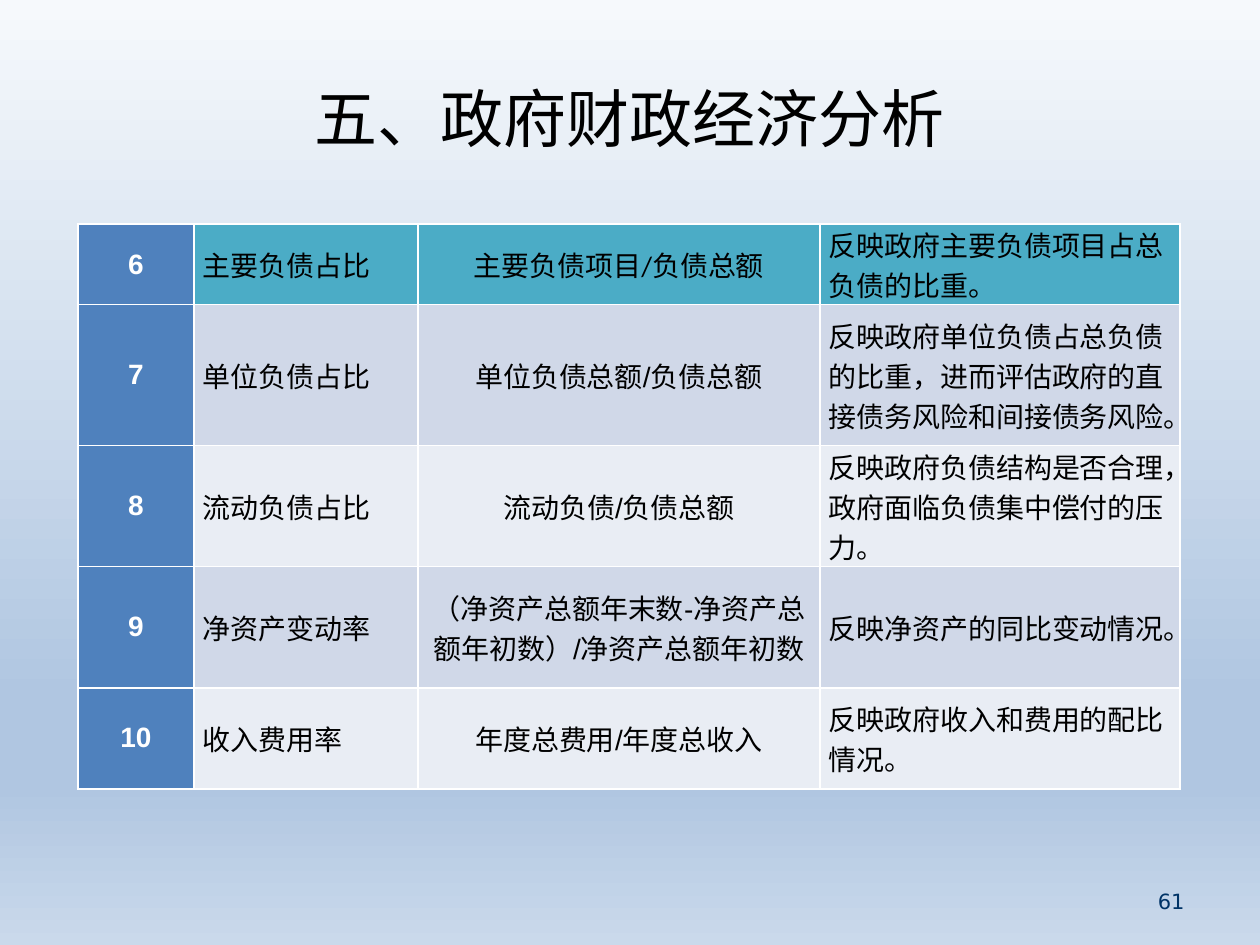
from pptx import Presentation
from pptx.dml.color import RGBColor
from pptx.enum.text import MSO_ANCHOR as Anchor, PP_ALIGN as Align
from pptx.oxml import parse_xml
from pptx.oxml.ns import nsdecls, qn
from pptx.util import Pt

EMU_PER_PX = 914400 / 126
WHITE, BLACK, NAVY = "FFFFFF", "000000", "003366"
NUMBER_FILL, LEAD_FILL = "4F81BD", "4BACC6"
BAND_FILLS = ["E9EDF4", "D0D8E8"]
BACKDROP = [(0, "F6F9FC"), (74, "B0C6E1"), (83, "B0C6E1"), (100, "CAD9EB")]
COLUMN_WIDTHS = [116, 224, 402, 360]
COLUMN_ALIGNS = [Align.CENTER, Align.LEFT, Align.CENTER, Align.LEFT]
ROW_HEIGHTS = [79, 141, 101, 101, 101]
INDICATORS = [
    ("6", "主要负债占比", "主要负债项目/负债总额", "反映政府主要负债项目占总负债的比重。"),
    ("7", "单位负债占比", "单位负债总额/负债总额",
     "反映政府单位负债占总负债的比重，进而评估政府的直接债务风险和间接债务风险。"),
    ("8", "流动负债占比", "流动负债/负债总额",
     "反映政府负债结构是否合理，政府面临负债集中偿付的压力。"),
    ("9", "净资产变动率", "（净资产总额年末数-净资产总额年初数）/净资产总额年初数",
     "反映净资产的同比变动情况。"),
    ("10", "收入费用率", "年度总费用/年度总收入", "反映政府收入和费用的配比情况。"),
]


def px(length):
    return round(length * EMU_PER_PX)


def rgb(hex_code):
    return RGBColor.from_string(hex_code)


class SlideBuilder:
    def __init__(self, deck):
        self.slide = deck.slides.add_slide(deck.slide_layouts[6])

    def background(self, stops):
        fill = self.slide.background.fill
        fill.gradient()
        fill.gradient_angle = 270
        stop_list = next(self.slide.element.iter(qn("a:gsLst")))
        for stop in list(stop_list):
            stop_list.remove(stop)
        for percent, color in stops:
            stop_list.append(parse_xml(
                f'<a:gs {nsdecls("a")} pos="{percent * 1000}">'
                f'<a:srgbClr val="{color}"/></a:gs>'))

    def fill_text(self, frame, text, size, font, color, align, bold=False):
        frame.word_wrap = True
        paragraph = frame.paragraphs[0]
        paragraph.text = text
        paragraph.alignment = align
        paragraph.font.size = Pt(size)
        paragraph.font.name = font
        paragraph.font.bold = bold
        paragraph.font.color.rgb = rgb(color)

    def text(self, box, text, size, font, color, align):
        frame = self.slide.shapes.add_textbox(*map(px, box)).text_frame
        frame.vertical_anchor = Anchor.MIDDLE
        self.fill_text(frame, text, size, font, color, align)

    def borders(self, cell):
        properties = cell._tc.get_or_add_tcPr()
        for index, side in enumerate(("lnL", "lnR", "lnT", "lnB")):
            properties.insert(index, parse_xml(
                f'<a:{side} {nsdecls("a")} w="{Pt(1)}"><a:solidFill>'
                f'<a:srgbClr val="{WHITE}"/></a:solidFill></a:{side}>'))

    def cell(self, cell, text, fill, font, color, align, bold):
        cell.margin_left = cell.margin_right = px(9)
        cell.margin_top = cell.margin_bottom = 0
        cell.vertical_anchor = Anchor.MIDDLE
        cell.fill.solid()
        cell.fill.fore_color.rgb = rgb(fill)
        self.fill_text(cell.text_frame, text, 16, font, color, align, bold)
        self.borders(cell)

    def table(self, left, top, widths, heights, records):
        table = self.slide.shapes.add_table(
            len(heights), len(widths), px(left), px(top),
            px(sum(widths)), px(sum(heights))).table
        for column, width in zip(table.columns, widths):
            column.width = px(width)
        for row, height in zip(table.rows, heights):
            row.height = px(height)
        for r, record in enumerate(records):
            row_fill = BAND_FILLS[r % 2] if r else LEAD_FILL
            for c, text in enumerate(record):
                is_number = c == 0
                self.cell(
                    table.cell(r, c), text,
                    NUMBER_FILL if is_number else row_fill,
                    "Arial" if is_number or r else "Calibri",
                    WHITE if is_number else BLACK,
                    COLUMN_ALIGNS[c], is_number)


def main():
    deck = Presentation()
    deck.slide_width, deck.slide_height = px(1260), px(945)
    builder = SlideBuilder(deck)
    builder.background(BACKDROP)
    builder.table(78, 224, COLUMN_WIDTHS, ROW_HEIGHTS, INDICATORS)
    builder.text((63, 38, 1134, 158), "五、政府财政经济分析", 36, "Calibri", BLACK, Align.CENTER)
    builder.text((903, 876, 294, 50), "61", 12, "DejaVu Sans", NAVY, Align.RIGHT)
    deck.save("out.pptx")


if __name__ == "__main__":
    main()
